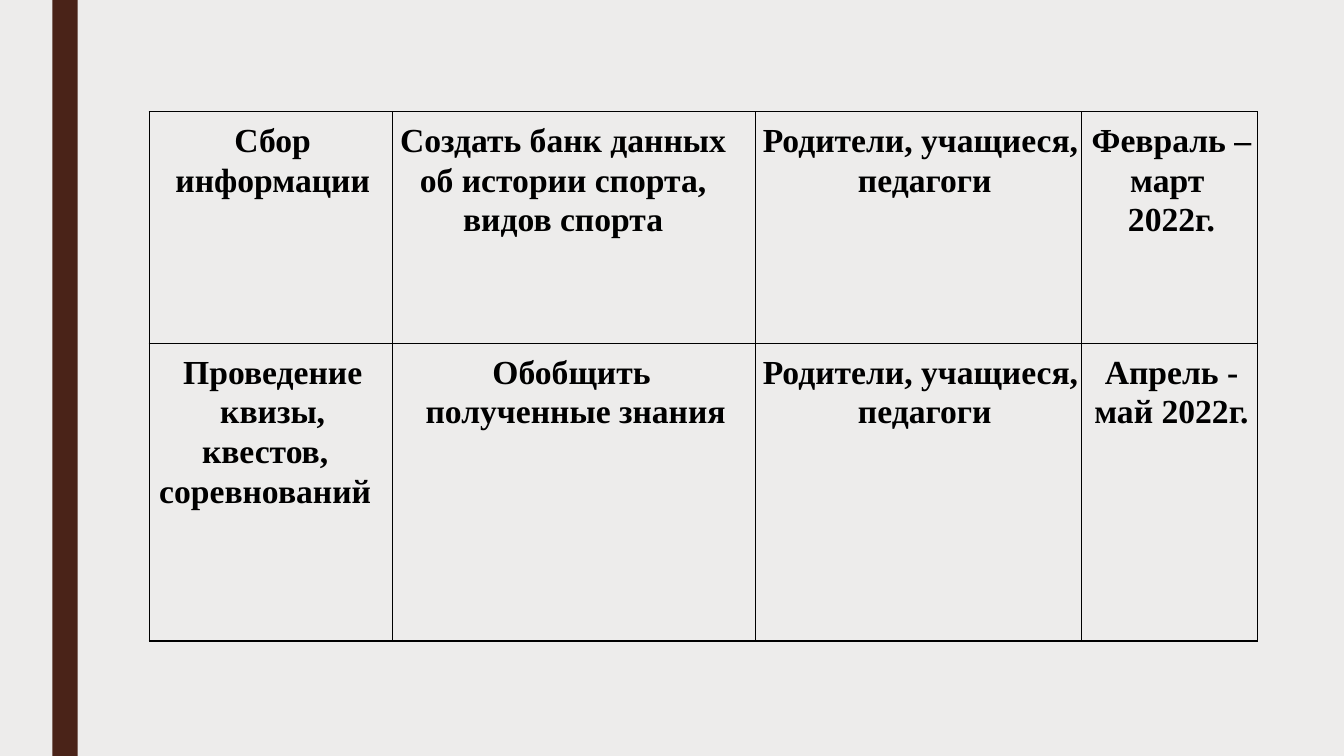
from pptx import Presentation
from pptx.dml.color import RGBColor
from pptx.enum.shapes import MSO_SHAPE
from pptx.enum.text import PP_ALIGN
from pptx.oxml import parse_xml
from pptx.oxml.ns import nsdecls
from pptx.util import Inches, Pt

COLORS = {"background": "EDECEB", "bar": "4A2318", "ink": "000000"}
FONT = "Times New Roman"

# Each cell is a list of paragraphs: (text, right margin in inches)
PARTICIPANTS = [("Родители, учащиеся,", 0), (" педагоги", 0)]
PLAN = [
    [
        [("Сбор информации", 0)],
        [("Создать банк данных об истории спорта, видов спорта", 0.25)],
        PARTICIPANTS,
        [("Февраль –", 0), ("март ", 0), ("2022г.", 0)],
    ],
    [
        [("Проведение квизы,", 0), ("квестов, соревнований", 0.15)],
        [("Обобщить ", 0), ("полученные знания", 0)],
        PARTICIPANTS,
        [("Апрель -", 0), ("май 2022г.", 0)],
    ],
]
COLUMN_WIDTHS = [2.41, 3.6, 3.24, 1.74]
ROW_HEIGHTS = [2.3, 2.95]
TABLE_LEFT, TABLE_TOP = 1.48, 1.11


def color(name):
    return RGBColor.from_string(COLORS[name])


def add_borders(cell):
    properties = cell._tc.get_or_add_tcPr()
    for position, side in enumerate(("lnL", "lnR", "lnT", "lnB")):
        properties.insert(position, parse_xml(
            f'<a:{side} {nsdecls("a")} w="{Pt(1)}"><a:solidFill>'
            f'<a:srgbClr val="{COLORS["ink"]}"/></a:solidFill></a:{side}>'))


def fill_cell(cell, paragraphs):
    cell.fill.background()
    add_borders(cell)
    cell.margin_left, cell.margin_right = Inches(0.03), 0
    cell.margin_top, cell.margin_bottom = Inches(0.08), Inches(0.04)
    frame = cell.text_frame
    for index, (text, right_margin) in enumerate(paragraphs):
        para = frame.add_paragraph() if index else frame.paragraphs[0]
        para.alignment = PP_ALIGN.CENTER
        para.line_spacing = 1.07
        properties = para._p.get_or_add_pPr()
        properties.set("marL", str(Inches(0.01)))
        properties.set("marR", str(Inches(right_margin)))
        span = para.add_run()
        span.text = text
        span.font.name = FONT
        span.font.size = Pt(24)
        span.font.bold = True
        span.font.color.rgb = color("ink")


def add_plan_table(page):
    table = page.shapes.add_table(
        len(ROW_HEIGHTS), len(COLUMN_WIDTHS),
        Inches(TABLE_LEFT), Inches(TABLE_TOP),
        Inches(sum(COLUMN_WIDTHS)), Inches(sum(ROW_HEIGHTS))).table
    table.first_row = table.horz_banding = False
    for column, width in zip(table.columns, COLUMN_WIDTHS):
        column.width = Inches(width)
    for row, height, contents in zip(table.rows, ROW_HEIGHTS, PLAN):
        row.height = Inches(height)
        for cell, paragraphs in zip(row.cells, contents):
            fill_cell(cell, paragraphs)


def main():
    deck = Presentation()
    deck.slide_width, deck.slide_height = Inches(13.33), Inches(7.5)
    page = deck.slides.add_slide(deck.slide_layouts[6])
    page.background.fill.solid()
    page.background.fill.fore_color.rgb = color("background")

    bar = page.shapes.add_shape(
        MSO_SHAPE.RECTANGLE, Inches(0.52), 0, Inches(0.25), deck.slide_height)
    bar.shadow.inherit = False
    bar.fill.solid()
    bar.fill.fore_color.rgb = color("bar")
    bar.line.fill.background()

    add_plan_table(page)
    deck.save("out.pptx")


if __name__ == "__main__":
    main()
